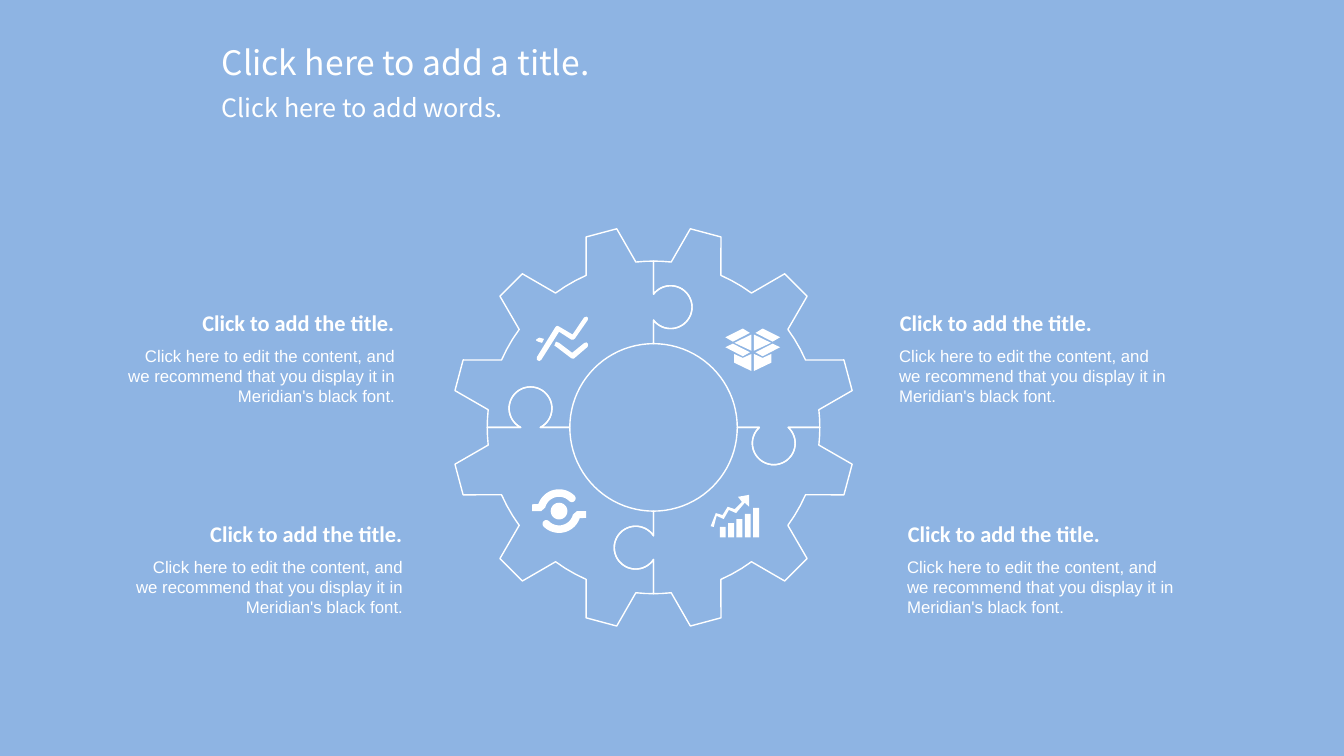
from math import asin, cos, pi, radians, sin

from pptx import Presentation
from pptx.dml.color import RGBColor
from pptx.enum.text import MSO_ANCHOR as Anchor
from pptx.enum.text import MSO_AUTO_SIZE as AutoSize
from pptx.enum.text import PP_ALIGN as Align
from pptx.util import Cm, Pt

COLORS = {"sky": "8EB4E3", "white": "FFFFFF"}
HEADING = "Click to add the title."
BODY = (
    "Click here to edit the content, and we recommend that you "
    "display it in Meridian's black font."
)
BLOCKS = [
    (22.66, 7.77, 6.93, Align.LEFT),
    (3.0, 7.77, 6.96, Align.RIGHT),
    (22.86, 13.08, 6.93, Align.LEFT),
    (3.2, 13.08, 6.96, Align.RIGHT),
]

HOLE, RIM, TIP = 2.11, 4.19, 5.09
TOOTH = [(-8.9, RIM), (-4.5, TIP), (4.5, TIP), (8.9, RIM)]
KNOB_RADIUS = 0.54
KNOBS = [(3.03, 0.43), (3.03, 0.40), (3.03, 0.45), (3.1, 0.48)]

TREND = [
    [(0.58, 0.38), (0.89, 0.58), (0.94, 0.58), (0.98, 0.55), (1.3, 0.09),
     (1.31, 0.03), (1.27, 0), (1.21, 0.02), (0.92, 0.45), (0.58, 0.25),
     (0.53, 0.23), (0.49, 0.26), (0.02, 1.02), (0.02, 1.09), (0.08, 1.12),
     (0.13, 1.09)],
    [(1.22, 0.66), (0.91, 0.91), (0.58, 0.66), (0.5, 0.63), (0.46, 0.73),
     (0.51, 0.76), (0.89, 1.05), (0.95, 1.06), (1.3, 0.76), (1.31, 0.69),
     (1.27, 0.65)],
    [(0.05, 0.63), (0.15, 0.66), (0.2, 0.56), (0.08, 0.53), (0.01, 0.57),
     (0, 0.6)],
]
CARTON_HALF = [
    [(0.03, 0.15), (0.03, 0.56), (0.46, 0.36)],
    [(0.07, 0.11), (0.25, 0), (0.69, 0.22), (0.5, 0.33)],
    [(0.69, 0.47), (0.25, 0.7), (0.07, 0.6), (0.5, 0.38)],
    [(0.03, 0.64), (0.03, 1.07), (0.47, 0.86), (0.47, 0.64), (0.25, 0.74)],
]
GROWTH_ARROW = [
    (0.46, 0.38), (0.64, 0.46), (0.86, 0.2), (0.97, 0.3), (0.97, 0),
    (0.69, 0.05), (0.79, 0.18), (0.61, 0.36), (0.43, 0.3), (0.3, 0.51),
    (0.13, 0.46), (0, 0.79), (0.08, 0.81), (0.15, 0.53), (0.33, 0.61),
]
BAR_TOPS = [0.81, 0.71, 0.61, 0.48, 0.33]


def color(name):
    return RGBColor.from_string(COLORS[name])


def polar(center, radius, angle):
    turn = radians(angle)
    return center[0] + radius * sin(turn), center[1] - radius * cos(turn)


def arc(center, radius, start, end):
    steps = max(2, round(abs(end - start) / 4))
    return [polar(center, radius, start + (end - start) * step / steps)
            for step in range(steps + 1)]


def draw_outline(page, contours, left=0, top=0, filled=True):
    pen = None
    for contour in contours:
        points = [(Cm(left + x), Cm(top + y)) for x, y in contour]
        if pen is None:
            pen = page.shapes.build_freeform(*points[0])
        else:
            pen.move_to(*points[0])
        pen.add_line_segments(points[1:], close=True)
    shape = pen.convert_to_shape()
    shape.shadow.inherit = False
    if filled:
        shape.fill.solid()
        shape.fill.fore_color.rgb = color("white")
        shape.line.fill.background()
    else:
        shape.fill.background()
        shape.line.color.rgb = color("white")
        shape.line.width = Pt(1)


def seam(center, quarter):
    angle = 90 * quarter
    distance, offset = KNOBS[quarter % 4]
    start = -asin(offset / KNOB_RADIUS)
    points = [polar(center, RIM, angle)]
    for step in range(41):
        turn = start + (pi - 2 * start) * step / 40
        along = distance + KNOB_RADIUS * cos(turn)
        aside = offset + KNOB_RADIUS * sin(turn)
        points.append(polar(polar(center, along, angle), aside, angle + 90))
    return points + [polar(center, HOLE, angle)]


def add_gear(page, x, y):
    center = (x, y)
    for quarter in range(4):
        start = 90 * quarter
        rim = []
        edge = start
        for middle in (start + 15, start + 45, start + 75):
            rim += arc(center, RIM, edge, middle + TOOTH[0][0])
            rim += [polar(center, radius, middle + shift)
                    for shift, radius in TOOTH]
            edge = middle + TOOTH[-1][0]
        rim += arc(center, RIM, edge, start + 90)
        hole = arc(center, HOLE, start + 90, start)
        piece = rim + seam(center, quarter + 1) + hole + seam(center, quarter)[::-1]
        draw_outline(page, [piece], filled=False)


def add_trend_icon(page, left, top):
    draw_outline(page, TREND, left, top)


def add_carton_icon(page, left, top):
    panels = [[(0.68 + side * x, y) for x, y in panel]
              for side in (-1, 1) for panel in CARTON_HALF]
    draw_outline(page, panels, left, top)


def add_growth_icon(page, left, top):
    contours = [GROWTH_ARROW]
    for index, height in enumerate(BAR_TOPS):
        start = 0.23 + 0.21 * index
        end = start + 0.15
        contours.append([(start, height), (end, height), (end, 1.07), (start, 1.07)])
    draw_outline(page, contours, left, top)


def add_eye_icon(page, left, top):
    middle = (0, 0)
    lid = [(-0.45, 0), (-0.68, 0), (-0.68, -0.17)]
    lid += arc(middle, 0.55, -71, 45)
    lid += arc(polar(middle, 0.455, 45), 0.095, 45, 225)
    lid += arc(middle, 0.36, 45, -76)
    lower_lid = [(-x, -y) for x, y in lid]
    pupil = arc(middle, 0.21, 0, 360)
    draw_outline(page, [lid, lower_lid, pupil], left + 0.68, top + 0.54)


def write_text(box, words, font, size, align, bold=False):
    frame = box.text_frame
    frame.word_wrap = True
    para = frame.paragraphs[0]
    para.alignment = align
    para.space_before = Pt(0)
    span = para.add_run()
    span.text = words
    span.font.name = font
    span.font.size = Pt(size)
    span.font.bold = bold
    span.font.color.rgb = color("white")
    return frame


def add_header(page, left, top, width):
    lines = [
        (page.shapes.title, 0, 1.27, "Click here to add a title.", 24, Align.JUSTIFY),
        (page.placeholders[1], 1.27, 1.02, "Click here to add words.", 18, Align.LEFT),
    ]
    for box, drop, height, words, size, align in lines:
        box.left, box.top = Cm(left), Cm(top + drop)
        box.width, box.height = Cm(width), Cm(height)
        frame = write_text(box, words, "Noto Sans CJK SC", size, align)
        frame.vertical_anchor = Anchor.TOP
        frame.auto_size = AutoSize.SHAPE_TO_FIT_TEXT


def add_text_block(page, left, top, width, align):
    heading_width = 5.59
    heading_left = left - 0.23
    if align == Align.RIGHT:
        heading_left = left + width + 0.23 - heading_width
    heading = page.shapes.add_textbox(
        Cm(heading_left), Cm(top), Cm(heading_width), Cm(0.74))
    frame = write_text(heading, HEADING, "Calibri", 16, align, bold=True)
    frame.vertical_anchor = Anchor.MIDDLE
    body = page.shapes.add_textbox(Cm(left), Cm(top + 0.94), Cm(width), Cm(1.02))
    frame = write_text(body, BODY, "Arial", 12, align)
    frame.margin_left = frame.margin_right = 0
    frame.margin_top = frame.margin_bottom = 0
    frame.auto_size = AutoSize.SHAPE_TO_FIT_TEXT


def main():
    deck = Presentation()
    deck.slide_width, deck.slide_height = Cm(33.87), Cm(19.05)
    page = deck.slides.add_slide(deck.slide_layouts[0])
    page.background.fill.solid()
    page.background.fill.fore_color.rgb = color("sky")
    add_header(page, 5.33, 0.94, 10.08)
    add_gear(page, 16.47, 10.77)
    add_trend_icon(page, 13.51, 7.98)
    add_carton_icon(page, 18.29, 8.28)
    add_eye_icon(page, 13.41, 12.34)
    add_growth_icon(page, 17.91, 12.47)
    for block in BLOCKS:
        add_text_block(page, *block)
    deck.save("out.pptx")


if __name__ == "__main__":
    main()
